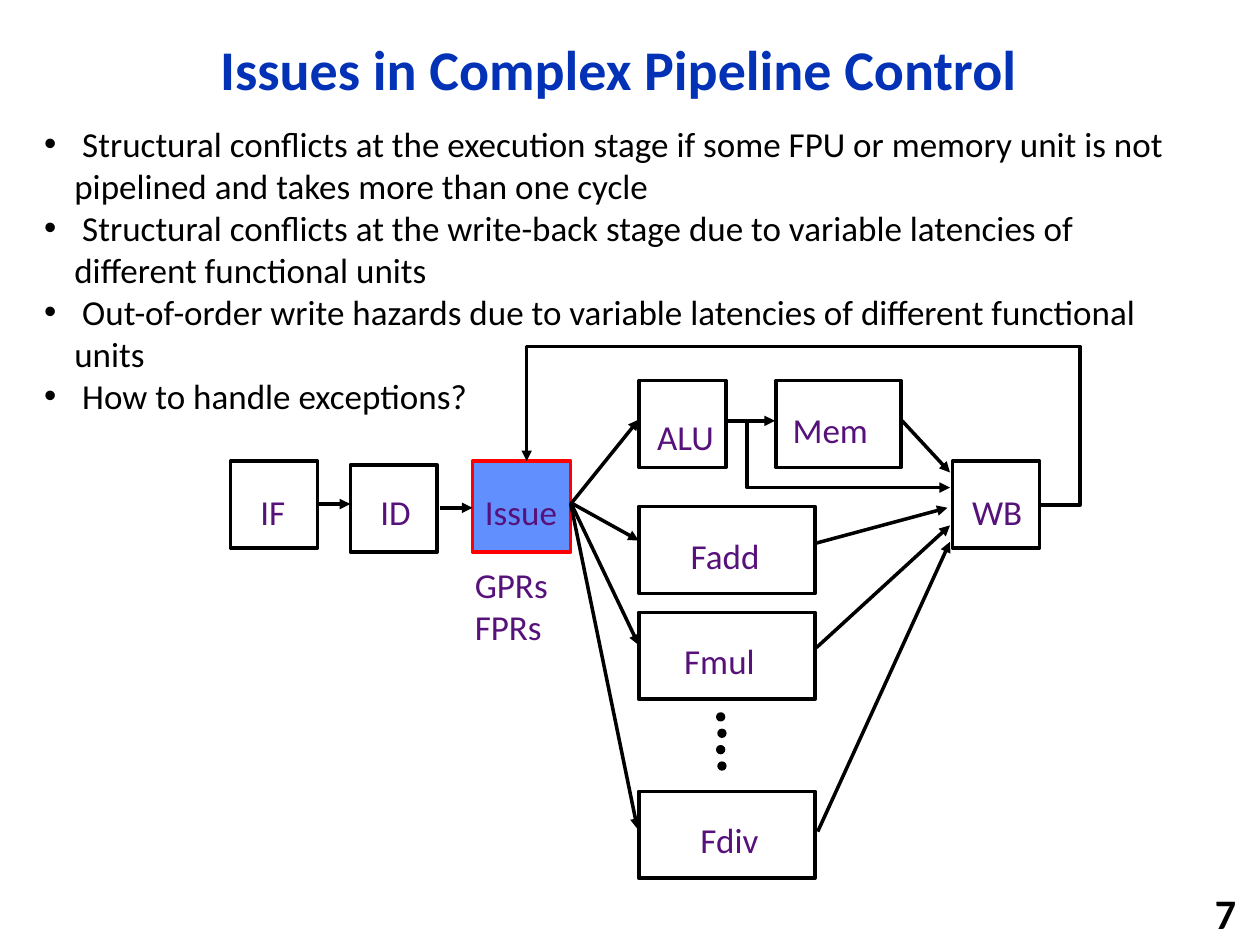
from dataclasses import dataclass

from lxml.etree import SubElement
from pptx import Presentation
from pptx.dml.color import RGBColor
from pptx.enum.shapes import MSO_CONNECTOR, MSO_SHAPE
from pptx.enum.text import MSO_ANCHOR, MSO_AUTO_SIZE, PP_ALIGN
from pptx.oxml.ns import qn
from pptx.util import Pt

PX = 9144  # EMU per px, 100 px to the inch
BLACK, BLUE, PURPLE = "000000", "0332B7", "56127A"
BODY = {"name": "Calibri", "size": Pt(20), "bold": False}
TITLE = {"name": "Calibri", "size": Pt(32), "bold": True}
NUMBER = {"name": "Calibri", "size": Pt(24), "bold": True}

Rect = tuple[int, int, int, int]
Point = tuple[int, int]


@dataclass
class Stage:
    name: str
    box: Rect
    label: Rect
    fill: str | None = None
    line: str = BLACK


STAGES = [
    Stage("IF", (183, 366, 69, 69), (183, 384, 67, 43)),
    Stage("ID", (278, 369, 69, 69), (286, 384, 56, 43)),
    Stage("Issue", (375, 366, 78, 72), (367, 384, 93, 43), "618FFD", "FF0000"),
    Stage("WB", (756, 366, 69, 69), (758, 384, 67, 43)),
    Stage("ALU", (507, 302, 69, 69), (508, 325, 72, 43)),
    Stage("Mem", (616, 302, 99, 69), (617, 319, 84, 43)),
    Stage("Fadd", (507, 402, 140, 69), (517, 419, 117, 43)),
    Stage("Fmul", (507, 486, 140, 69), (517, 503, 108, 43)),
    Stage("Fdiv", (507, 628, 140, 69), (525, 645, 108, 43)),
]

ARROWS: list[list[Point]] = [
    # Front end
    [(253, 400), (278, 400)],
    [(349, 403), (375, 403)],
    # Issue to the functional units
    [(453, 400), (507, 333)],
    [(453, 399), (507, 429)],
    [(453, 399), (507, 512)],
    [(453, 400), (506, 658)],
    # ALU to memory, and around it to write-back
    [(594, 334), (615, 334)],
    [(577, 334), (593, 334), (593, 387), (754, 387)],
    # Functional units to write-back
    [(716, 334), (754, 375)],
    [(648, 431), (752, 403)],
    [(648, 514), (754, 417)],
    [(649, 660), (754, 430)],
    # Write-back to the registers
    [(826, 401), (857, 401), (857, 275), (418, 275), (418, 366)],
]

BULLETS = [
    " Structural conflicts at the execution stage if some FPU or memory unit is not "
    "pipelined and takes more than one cycle",
    " Structural conflicts at the write-back stage due to variable latencies of "
    "different functional units",
    " Out-of-order write hazards due to variable latencies of different functional units",
    " How to handle exceptions?",
]


def rgb(color: str) -> RGBColor:
    return RGBColor.from_string(color)


def emu(values) -> list[int]:
    return [v * PX for v in values]


def place(sp, rect: Rect) -> None:
    sp.left, sp.top, sp.width, sp.height = emu(rect)


def write(sp, lines: list[str], fmt: dict, color: str, align=PP_ALIGN.LEFT,
          anchor=MSO_ANCHOR.TOP, spacing: float = 1.0) -> None:
    tf = sp.text_frame
    tf.word_wrap = True
    tf.auto_size = MSO_AUTO_SIZE.NONE
    tf.vertical_anchor = anchor
    for i, line in enumerate(lines):
        p = tf.paragraphs[0] if i == 0 else tf.add_paragraph()
        para = {"alignment": align, "line_spacing": spacing,
                "space_before": Pt(0), "space_after": Pt(0)}
        for key, value in para.items():
            setattr(p, key, value)
        r = p.add_run()
        r.text = line
        for key, value in fmt.items():
            setattr(r.font, key, value)
        r.font.color.rgb = rgb(color)


def add_text(shapes, rect: Rect, lines: list[str], *args, **kwargs) -> None:
    write(shapes.add_textbox(*emu(rect)), lines, *args, **kwargs)


def add_preset(shapes, kind, rect: Rect, fill: str | None, line: str, width: int) -> None:
    sp = shapes.add_shape(kind, *emu(rect))
    sp.shadow.inherit = False
    if fill:
        sp.fill.solid()
        sp.fill.fore_color.rgb = rgb(fill)
    else:
        sp.fill.background()
    sp.line.color.rgb = rgb(line)
    sp.line.width = Pt(width)


def add_arrow(shapes, points: list[Point]) -> None:
    if len(points) == 2:
        sp = shapes.add_connector(MSO_CONNECTOR.STRAIGHT, *emu(points[0] + points[1]))
    else:
        builder = shapes.build_freeform(*points[0], scale=PX)
        builder.add_line_segments(points[1:], close=False)
        sp = builder.convert_to_shape()
        sp.fill.background()
    sp.line.color.rgb = rgb(BLACK)
    sp.line.width = Pt(2)
    SubElement(sp.get_or_add_ln(), qn("a:tailEnd"), type="triangle")
    SubElement(sp.element.spPr, qn("a:effectLst"))


def main() -> None:
    prs = Presentation()
    prs.slide_width, prs.slide_height = emu((1000, 750))
    slide = prs.slides.add_slide(prs.slide_layouts[1])
    shapes = slide.shapes

    # Title and bullet list
    title, body = shapes.title, slide.placeholders[1]
    place(title, (92, 17, 798, 81))
    write(title, ["Issues in Complex Pipeline Control"], TITLE, BLUE,
          PP_ALIGN.CENTER, MSO_ANCHOR.MIDDLE, 0.9)
    place(body, (25, 92, 933, 245))
    write(body, BULLETS, BODY, BLACK)
    for p in body.text_frame.paragraphs:
        pPr = p._p.get_or_add_pPr()
        pPr.set("marL", str(24 * PX))
        pPr.set("indent", str(-24 * PX))

    # Pipeline stages, arrows, then labels on top
    for stage in STAGES:
        add_preset(shapes, MSO_SHAPE.RECTANGLE, stage.box, stage.fill, stage.line, 2)
    for points in ARROWS:
        add_arrow(shapes, points)
    for stage in STAGES:
        add_text(shapes, stage.label, [stage.name], BODY, PURPLE, PP_ALIGN.CENTER)
    add_text(shapes, (367, 442, 96, 77), ["GPRs", "FPRs"], BODY, PURPLE)

    # Dots standing for further units
    for i in range(4):
        add_preset(shapes, MSO_SHAPE.OVAL, (569 + i % 2, 566 + 13 * i, 6, 6),
                   BLACK, BLACK, 1)

    # Slide number
    add_text(shapes, (783, 708, 208, 32), ["7"], NUMBER, BLACK,
             PP_ALIGN.RIGHT, MSO_ANCHOR.MIDDLE)
    prs.save("out.pptx")


if __name__ == "__main__":
    main()
